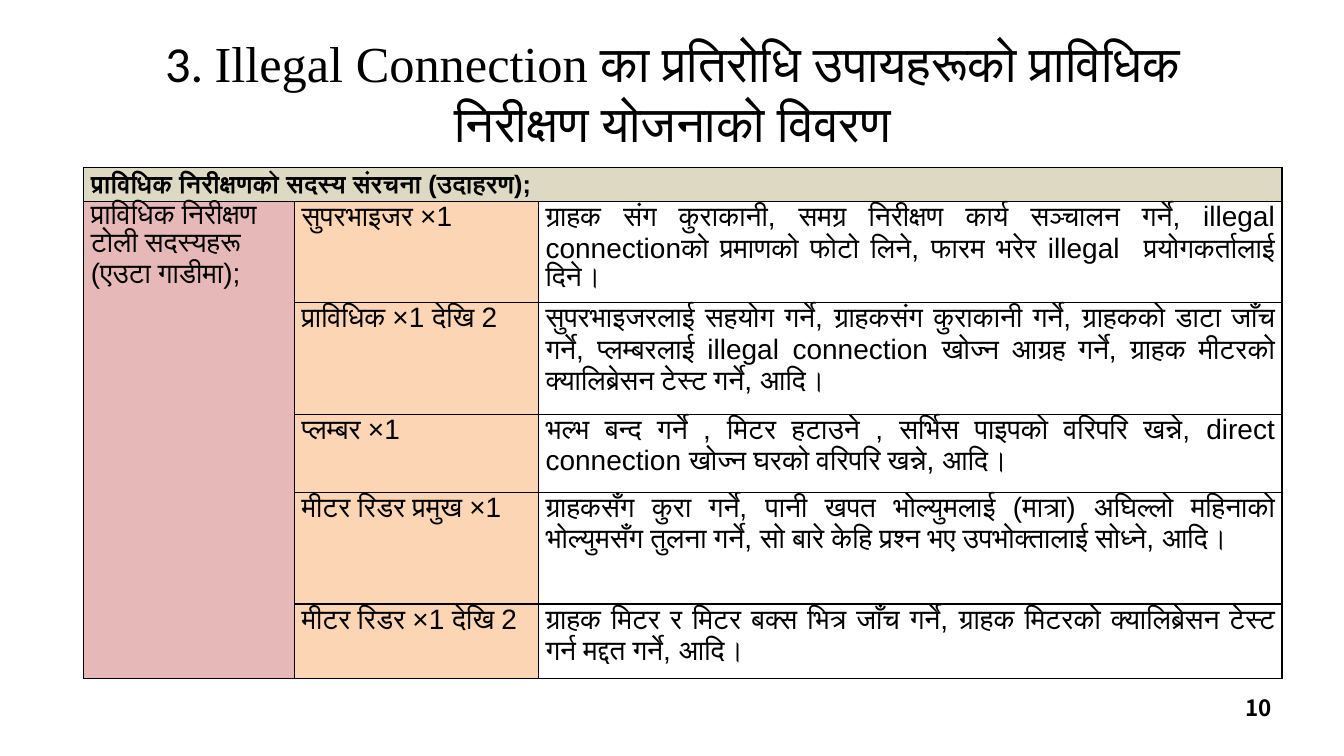
from lxml import etree
from pptx import Presentation
from pptx.dml.color import RGBColor
from pptx.enum.text import MSO_ANCHOR as Anchor, PP_ALIGN as Align
from pptx.oxml.ns import qn
from pptx.util import Cm, Pt

BLACK = RGBColor(0x00, 0x00, 0x00)
HEADER_FILL = RGBColor(0xDD, 0xD9, 0xC3)
TEAM_FILL = RGBColor(0xE6, 0xB9, 0xB8)
ROLE_FILL = RGBColor(0xFC, 0xD5, 0xB5)

BODY, HEADING, PAGE = "Arial", "Calibri", "Noto Sans CJK JP"

TITLE = [
    ("3. ", HEADING),
    ("Illegal Connection ", "Times New Roman"),
    ("का प्रतिरोधि उपायहरूको प्राविधिक निरीक्षण योजनाको विवरण", HEADING),
]
HEADER = "प्राविधिक निरीक्षणको सदस्य संरचना (उदाहरण);"
TEAM = "प्राविधिक निरीक्षण टोली सदस्यहरू (एउटा गाडीमा);"

# Each member: runs of the role, then the duties
MEMBERS = [
    ([("सुपरभाइजर ×1", BODY)],
     "ग्राहक संग कुराकानी, समग्र निरीक्षण कार्य सञ्चालन गर्ने, illegal connectionको "
     "प्रमाणको फोटो लिने, फारम भरेर illegal  प्रयोगकर्तालाई दिने।"),
    ([("प्राविधिक", HEADING), (" ×1 ", BODY), ("देखि", HEADING), (" 2", BODY)],
     "सुपरभाइजरलाई सहयोग गर्ने, ग्राहकसंग कुराकानी गर्ने, ग्राहकको डाटा जाँच गर्ने, "
     "प्लम्बरलाई illegal connection खोज्न आग्रह गर्ने, ग्राहक मीटरको क्यालिब्रेसन "
     "टेस्ट गर्ने, आदि।"),
    ([("प्लम्बर", HEADING), (" ×1", BODY)],
     "भल्भ बन्द गर्ने , मिटर हटाउने , सर्भिस पाइपको वरिपरि खन्ने, direct connection "
     "खोज्न घरको वरिपरि खन्ने, आदि।"),
    ([("मीटर रिडर प्रमुख ", HEADING), ("×1", BODY)],
     "ग्राहकसँग कुरा गर्ने, पानी खपत भोल्युमलाई (मात्रा) अघिल्लो महिनाको भोल्युमसँग "
     "तुलना गर्ने, सो बारे केहि प्रश्न भए उपभोक्तालाई सोध्ने, आदि।"),
    ([("मीटर रिडर ", HEADING), ("×1 ", BODY), ("देखि", HEADING), (" 2", BODY)],
     "ग्राहक मिटर र मिटर बक्स भित्र जाँच गर्ने, ग्राहक मिटरको क्यालिब्रेसन टेस्ट गर्न "
     "मद्दत गर्ने, आदि।"),
]
COL_WIDTHS = [5.31, 6.15, 18.74]
ROW_HEIGHTS = [0.86, 2.39, 2.82, 1.96, 2.82, 1.88]


def write_runs(p, runs, size, align, bold=False):
    p.alignment = align
    for text, font in runs:
        r = p.add_run()
        r.text = text
        r.font.name = font
        r.font.size = Pt(size)
        r.font.bold = bold
        r.font.color.rgb = BLACK


def add_text(s, left, top, width, height, runs, size, align, bold=False):
    box = s.shapes.add_textbox(Cm(left), Cm(top), Cm(width), Cm(height))
    tf = box.text_frame
    tf.word_wrap = True
    tf.vertical_anchor = Anchor.MIDDLE
    write_runs(tf.paragraphs[0], runs, size, align, bold)


def add_borders(cell):
    tc_pr = cell._tc.get_or_add_tcPr()
    for side in ("lnL", "lnR", "lnT", "lnB"):
        ln = etree.SubElement(tc_pr, qn(f"a:{side}"), w=str(Pt(1)))
        fill = etree.SubElement(ln, qn("a:solidFill"))
        etree.SubElement(fill, qn("a:srgbClr"), val=str(BLACK))


def fill_cell(cell, runs, fill=None, align=Align.LEFT, size=20, bold=False):
    if fill is not None:
        cell.fill.solid()
        cell.fill.fore_color.rgb = fill
    p = cell.text_frame.paragraphs[0]
    p.space_after = Pt(6)
    write_runs(p, runs, size, align, bold)


def add_member_table(s):
    frame = s.shapes.add_table(len(ROW_HEIGHTS), len(COL_WIDTHS), Cm(2.11), Cm(4.22),
                               Cm(sum(COL_WIDTHS)), Cm(sum(ROW_HEIGHTS)))
    table = frame.table
    for column, width in zip(table.columns, COL_WIDTHS):
        column.width = Cm(width)
    for row, height in zip(table.rows, ROW_HEIGHTS):
        row.height = Cm(height)
    for cell in table.iter_cells():
        add_borders(cell)
        cell.fill.background()
        cell.margin_left = cell.margin_right = Cm(0.18)
        cell.margin_top = cell.margin_bottom = 0

    # Header across all columns, team down all member rows
    header, team = table.cell(0, 0), table.cell(1, 0)
    header.merge(table.cell(0, 2))
    header.vertical_anchor = Anchor.MIDDLE
    fill_cell(header, [(HEADER, BODY)], HEADER_FILL, Align.JUSTIFY, 18, True)
    team.merge(table.cell(len(MEMBERS), 0))
    fill_cell(team, [(TEAM, BODY)], TEAM_FILL)

    # Roles and duties
    for i, (role, duties) in enumerate(MEMBERS, start=1):
        fill_cell(table.cell(i, 1), role, ROLE_FILL)
        fill_cell(table.cell(i, 2), [(duties, BODY)], align=Align.JUSTIFY)


def main():
    prs = Presentation()
    prs.slide_width, prs.slide_height = Cm(33.87), Cm(19.05)
    s = prs.slides.add_slide(prs.slide_layouts[6])

    # Title
    add_text(s, 2.54, 0.74, 28.83, 3.18, TITLE, 36, Align.CENTER)
    # Inspection team
    add_member_table(s)
    # Page number
    add_text(s, 26.39, 17.32, 5.92, 1.02, [("10", PAGE)], 16, Align.RIGHT, True)

    prs.save("out.pptx")


if __name__ == "__main__":
    main()
